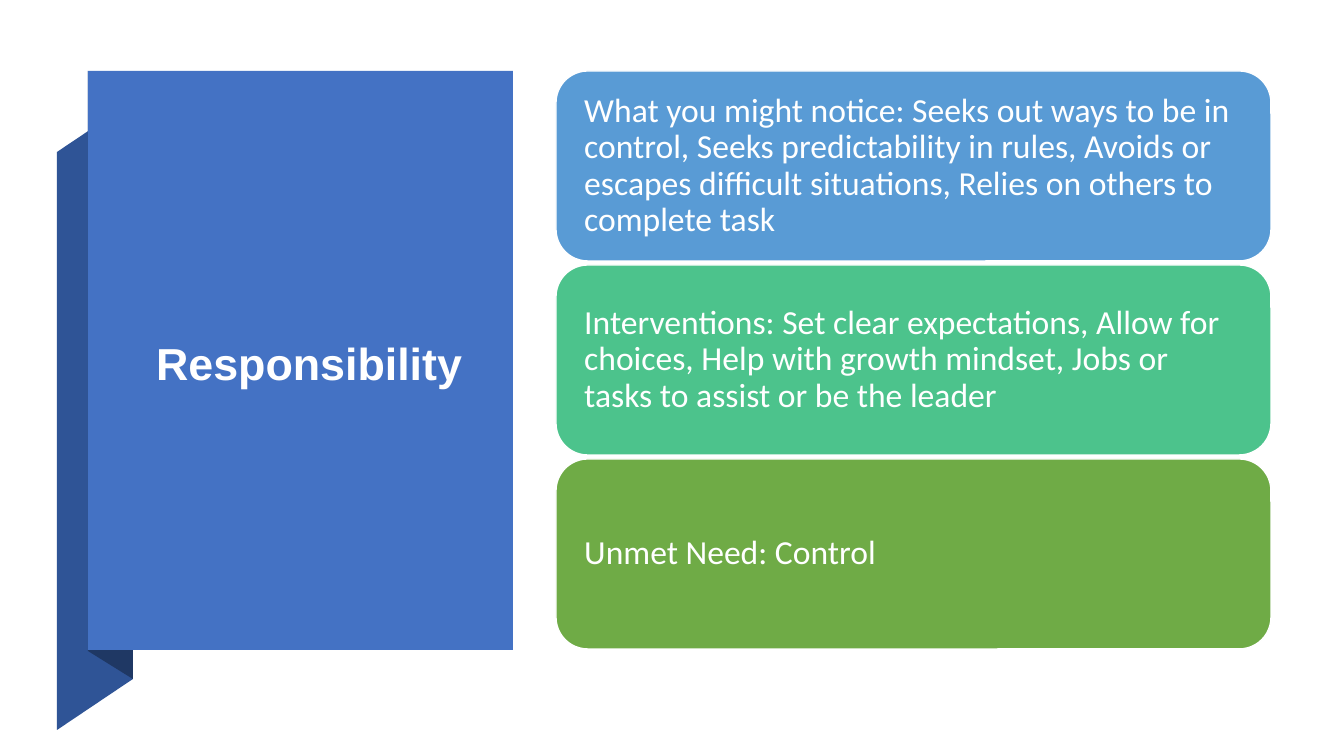
from pptx import Presentation
from pptx.dml.color import RGBColor
from pptx.enum.shapes import MSO_SHAPE
from pptx.enum.text import MSO_ANCHOR, PP_ALIGN
from pptx.util import Pt

PX = 914400 / 100.8
RECT = MSO_SHAPE.RECTANGLE
ROUNDED = MSO_SHAPE.ROUNDED_RECTANGLE
MIDDLE = MSO_ANCHOR.MIDDLE
LEFT = PP_ALIGN.LEFT
WHITE = "FFFFFF"

RIBBON_SIDE = [(57, 730), (133, 679), (133, 101), (57, 152)]
RIBBON_FOLD = [(88, 651), (133, 679), (133, 100), (88, 71)]
CARDS = [
    ("What you might notice: Seeks out ways to be in control, Seeks predictability in rules, "
     "Avoids or escapes difficult situations, Relies on others to complete task", "599BD5"),
    ("Interventions: Set clear expectations, Allow for choices, Help with growth mindset, "
     "Jobs or tasks to assist or be the leader", "4CC38C"),
    ("Unmet Need: Control", "6FAB46"),
]
CARD_TOP, CARD_STEP = 71, 194


def px(n):
    return round(n * PX)


def rgb(color):
    return RGBColor.from_string(color)


def paint(sp, fill, line=None):
    sp.shadow.inherit = False
    sp.fill.solid()
    sp.fill.fore_color.rgb = rgb(fill)
    if line:
        sp.line.color.rgb = rgb(line)
        sp.line.width = Pt(1)
    else:
        sp.line.fill.background()


def add_box(s, kind, x, y, w, h, fill, line=None):
    sp = s.shapes.add_shape(kind, px(x), px(y), px(w), px(h))
    paint(sp, fill, line)
    return sp


def add_polygon(s, points, fill):
    builder = s.shapes.build_freeform(*points[0], scale=PX)
    builder.add_line_segments(points[1:], close=True)
    paint(builder.convert_to_shape(), fill)


def write(sp, text, font, size, inset_x, bold=False):
    tf = sp.text_frame
    tf.word_wrap = True
    tf.vertical_anchor = MIDDLE
    tf.margin_left = tf.margin_right = px(inset_x)
    tf.text = text
    p = tf.paragraphs[0]
    p.alignment = LEFT
    p.line_spacing = 0.9
    r = p.runs[0]
    r.font.name = font
    r.font.size = Pt(size)
    r.font.bold = bold
    r.font.color.rgb = rgb(WHITE)


def add_title(s, text):
    sp = s.shapes.add_textbox(px(146), px(168), px(338), px(397))
    write(sp, text, "Arial", 32, 10, bold=True)


def add_card(s, y, text, fill):
    sp = add_box(s, ROUNDED, 556, y, 715, 190, fill, WHITE)
    write(sp, text, "Calibri", 24, 19)


def main():
    prs = Presentation()
    prs.slide_width, prs.slide_height = px(1344), px(756)
    s = prs.slides.add_slide(prs.slide_layouts[6])
    add_polygon(s, RIBBON_SIDE, "2F5496")
    add_polygon(s, RIBBON_FOLD, "1F3864")
    add_box(s, RECT, 88, 71, 425, 579, "4472C4")
    add_title(s, "Responsibility")
    for i, (text, fill) in enumerate(CARDS):
        add_card(s, CARD_TOP + i * CARD_STEP, text, fill)
    prs.save("out.pptx")


if __name__ == "__main__":
    main()
